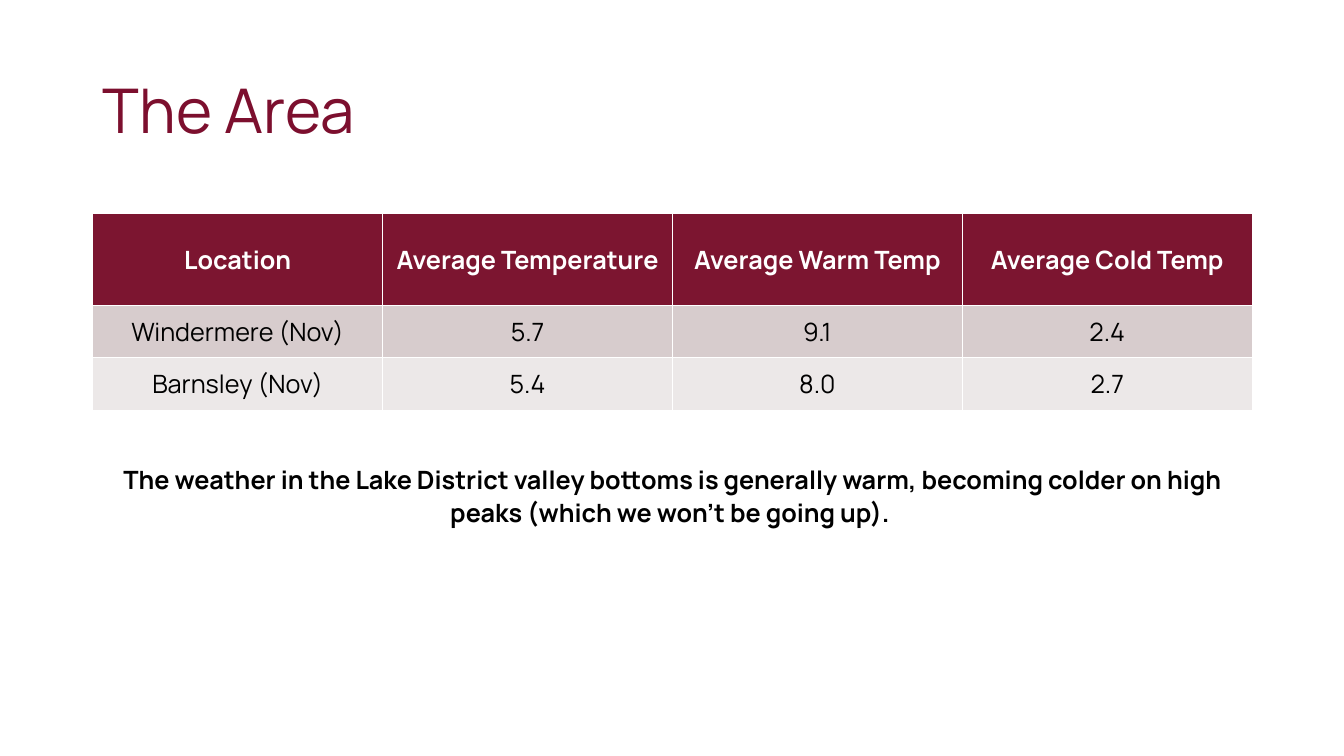
from dataclasses import dataclass

from pptx import Presentation
from pptx.dml.color import RGBColor
from pptx.enum.text import MSO_ANCHOR, MSO_AUTO_SIZE, PP_ALIGN
from pptx.util import Inches, Pt


@dataclass(frozen=True)
class Theme:
    font: str = "Manrope"
    title_size: int = 44
    text_size: int = 18
    title: str = "7C0F2E"
    header: str = "7C1530"
    bands: tuple = ("D7CCCD", "ECE8E8")
    light: str = "FFFFFF"
    dark: str = "000000"


THEME = Theme()
LEFT, WIDTH = Inches(0.92), Inches(11.5)
TITLE_ONLY_LAYOUT = 5

WEATHER = [
    ("Location", "Average Temperature", "Average Warm Temp", "Average Cold Temp"),
    ("Windermere (Nov)", "5.7", "9.1", "2.4"),
    ("Barnsley (Nov)", "5.4", "8.0", "2.7"),
]
ROW_HEIGHTS = (0.91, 0.52, 0.52)
SUMMARY = (
    "The weather in the Lake District valley bottoms is generally warm, "
    "becoming colder on high peaks (which we won’t be going up). "
)


def write(text_frame, text, color, size=THEME.text_size, bold=False, align=PP_ALIGN.CENTER):
    text_frame.text = text
    paragraph = text_frame.paragraphs[0]
    paragraph.alignment = align
    font = paragraph.runs[0].font
    font.name = THEME.font
    font.size = Pt(size)
    font.bold = bold
    font.color.rgb = RGBColor.from_string(color)
    return paragraph


def set_title(slide, text):
    title = slide.shapes.title
    title.left, title.top = LEFT, Inches(0.4)
    title.width, title.height = WIDTH, Inches(1.45)
    title.text_frame.vertical_anchor = MSO_ANCHOR.MIDDLE
    paragraph = write(title.text_frame, text, THEME.title, THEME.title_size, align=PP_ALIGN.LEFT)
    paragraph.line_spacing = 0.9


def add_weather_table(slide):
    # The default table style supplies the white grid and thicker header rule
    table = slide.shapes.add_table(
        len(WEATHER), len(WEATHER[0]), LEFT, Inches(2.12), WIDTH, Inches(sum(ROW_HEIGHTS))
    ).table
    for row_index, values in enumerate(WEATHER):
        table.rows[row_index].height = Inches(ROW_HEIGHTS[row_index])
        is_header = row_index == 0
        fill = THEME.header if is_header else THEME.bands[row_index - 1]
        color = THEME.light if is_header else THEME.dark
        for column_index, value in enumerate(values):
            cell = table.cell(row_index, column_index)
            cell.fill.solid()
            cell.fill.fore_color.rgb = RGBColor.from_string(fill)
            cell.vertical_anchor = MSO_ANCHOR.MIDDLE
            write(cell.text_frame, value, color, bold=is_header)


def add_summary(slide, text):
    text_frame = slide.shapes.add_textbox(LEFT, Inches(4.54), WIDTH, Inches(0.74)).text_frame
    text_frame.word_wrap = True
    text_frame.auto_size = MSO_AUTO_SIZE.SHAPE_TO_FIT_TEXT
    paragraph = write(text_frame, text, THEME.dark, bold=True)
    paragraph.line_spacing = 1.07
    paragraph.space_after = Pt(8)


def main():
    presentation = Presentation()
    presentation.slide_width, presentation.slide_height = Inches(13.33), Inches(7.5)
    slide = presentation.slides.add_slide(presentation.slide_layouts[TITLE_ONLY_LAYOUT])
    set_title(slide, "The Area")
    add_weather_table(slide)
    add_summary(slide, SUMMARY)
    presentation.save("out.pptx")


if __name__ == "__main__":
    main()
